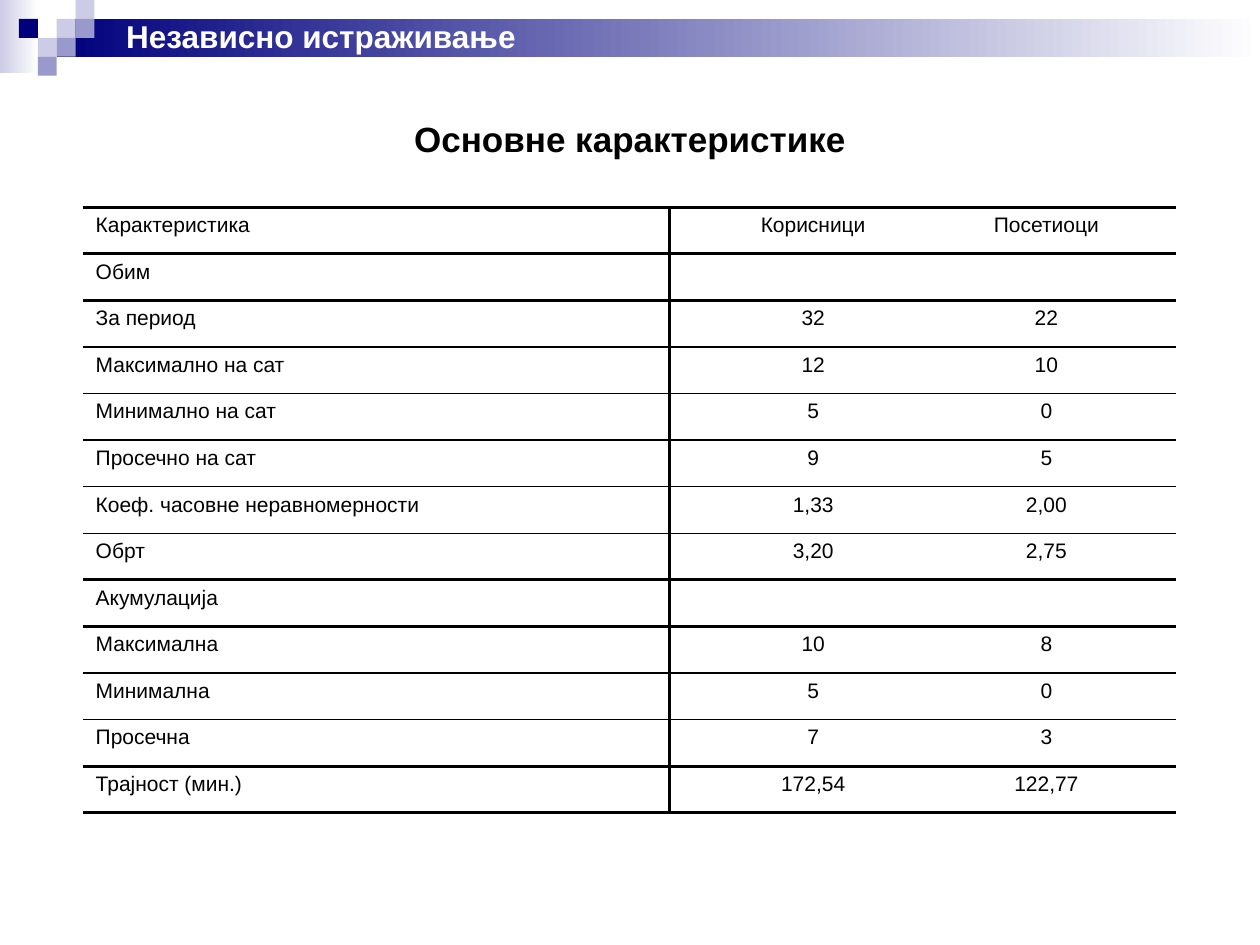
"""Build a slide with a table of the main characteristics of an independent survey."""
from lxml import etree
from pptx import Presentation
from pptx.dml.color import RGBColor
from pptx.enum.shapes import MSO_SHAPE
from pptx.enum.text import MSO_ANCHOR, MSO_AUTO_SIZE, PP_ALIGN
from pptx.oxml.ns import qn
from pptx.util import Pt

RECTANGLE = MSO_SHAPE.RECTANGLE
LEFT, CENTER = PP_ALIGN.LEFT, PP_ALIGN.CENTER
MIDDLE = MSO_ANCHOR.MIDDLE
GROW = MSO_AUTO_SIZE.SHAPE_TO_FIT_TEXT

NAVY, LAVENDER, VIOLET = "00007D", "CCCCE6", "9999CC"
BLACK, WHITE = "000000", "FFFFFF"

SQUARE = 10.8
SQUARES = [
    (3, 1, LAVENDER), (4, 0, LAVENDER), (4, 1, VIOLET), (2, 2, LAVENDER),
    (1, 1, NAVY), (3, 2, VIOLET), (2, 3, VIOLET),
]

ROWS = [
    ("Карактеристика", "", "Корисници", "Посетиоци"),
    ("Обим", "", "", ""),
    ("За период", "", "32", "22"),
    ("Максимално на сат", "", "12", "10"),
    ("Минимално на сат", "", "5", "0"),
    ("Просечно на сат", "", "9", "5"),
    ("Коеф. часовне неравномерности", "", "1,33", "2,00"),
    ("Обрт", "", "3,20", "2,75"),
    ("Акумулација", "", "", ""),
    ("Максимална", "", "10", "8"),
    ("Минимална", "", "5", "0"),
    ("Просечна", "", "7", "3"),
    ("Трајност (мин.)", "", "172,54", "122,77"),
]
COLUMN_WIDTHS = [334.8, 23, 118.8, 147.7]
ROW_HEIGHT = 26.64
HEAVY_RULES = {0, 1, 2, 8, 9, 12, 13}
HEAVY, THIN = 2, 1


def color(value):
    return RGBColor.from_string(value)


class SlideBuilder:
    """Hold the text style and the current slide."""

    def __init__(self, slide, font="Arial"):
        self.slide = slide
        self.font = font

    def add_run(self, text_frame, text, size, fill, bold=False, align=LEFT):
        paragraph = text_frame.paragraphs[0]
        paragraph.alignment = align
        run = paragraph.add_run()
        run.text = text
        run.font.name = self.font
        run.font.size = Pt(size)
        run.font.bold = bold
        run.font.color.rgb = color(fill)

    def title(self, text, left, top, width, height):
        shape = self.slide.shapes.title
        shape.left, shape.top = Pt(left), Pt(top)
        shape.width, shape.height = Pt(width), Pt(height)
        shape.text_frame.vertical_anchor = MIDDLE
        self.add_run(shape.text_frame, text, 20, BLACK, True, CENTER)

    def text(self, text, left, top, width, height):
        shape = self.slide.shapes.add_textbox(Pt(left), Pt(top), Pt(width), Pt(height))
        shape.text_frame.word_wrap = True
        shape.text_frame.auto_size = GROW
        self.add_run(shape.text_frame, text, 18, WHITE, True)

    def rectangle(self, left, top, width, height, fill, fade_to=None):
        shape = self.slide.shapes.add_shape(
            RECTANGLE, Pt(left), Pt(top), Pt(width), Pt(height))
        shape.shadow.inherit = False
        shape.line.fill.background()
        if fade_to:
            shape.fill.gradient()
            shape.fill.gradient_angle = 0
            for stop, value in zip(shape.fill.gradient_stops, (fill, fade_to)):
                stop.color.rgb = color(value)
        else:
            shape.fill.solid()
            shape.fill.fore_color.rgb = color(fill)

    def borders(self, cell, widths):
        properties = cell._tc.get_or_add_tcPr()
        for side, width in zip("LRTB", widths):
            line = etree.SubElement(properties, qn(f"a:ln{side}"), w=str(Pt(width)))
            if width:
                fill = etree.SubElement(line, qn("a:solidFill"))
                etree.SubElement(fill, qn("a:srgbClr"), val=BLACK)
            else:
                etree.SubElement(line, qn("a:noFill"))

    def table(self, rows, left, top):
        frame = self.slide.shapes.add_table(
            len(rows), len(COLUMN_WIDTHS), Pt(left), Pt(top),
            Pt(sum(COLUMN_WIDTHS)), Pt(ROW_HEIGHT * len(rows)))
        table = frame.table
        table.first_row = table.horz_banding = False
        for column, width in zip(table.columns, COLUMN_WIDTHS):
            column.width = Pt(width)
        for row_index, row in enumerate(rows):
            table.rows[row_index].height = Pt(ROW_HEIGHT)
            above, below = (HEAVY if rule in HEAVY_RULES else THIN
                            for rule in (row_index, row_index + 1))
            for column_index, text in enumerate(row):
                cell = table.cell(row_index, column_index)
                before = HEAVY if column_index == 1 else 0
                after = HEAVY if column_index == 0 else 0
                self.borders(cell, (before, after, above, below))
                cell.fill.background()
                if text:
                    align = CENTER if column_index else LEFT
                    self.add_run(cell.text_frame, text, 12, BLACK, align=align)
                else:
                    cell.margin_top = cell.margin_bottom = 0


def main():
    presentation = Presentation()
    presentation.slide_width, presentation.slide_height = Pt(720), Pt(540)
    slide = presentation.slides.add_slide(presentation.slide_layouts[5])
    builder = SlideBuilder(slide)
    builder.rectangle(0, 0, 22, 42, LAVENDER, WHITE)
    builder.rectangle(3 * SQUARE, SQUARE, 720 - 3 * SQUARE, 2 * SQUARE, NAVY, WHITE)
    for column, row, fill in SQUARES:
        builder.rectangle(column * SQUARE, row * SQUARE, SQUARE, SQUARE, fill)
    builder.table(ROWS, 47.5, 118.4)
    builder.title("Основне карактеристике", 36, 36, 648, 86.4)
    builder.text("Независно истраживање", 65, 6, 402.5, 29)
    presentation.save("out.pptx")


if __name__ == "__main__":
    main()
